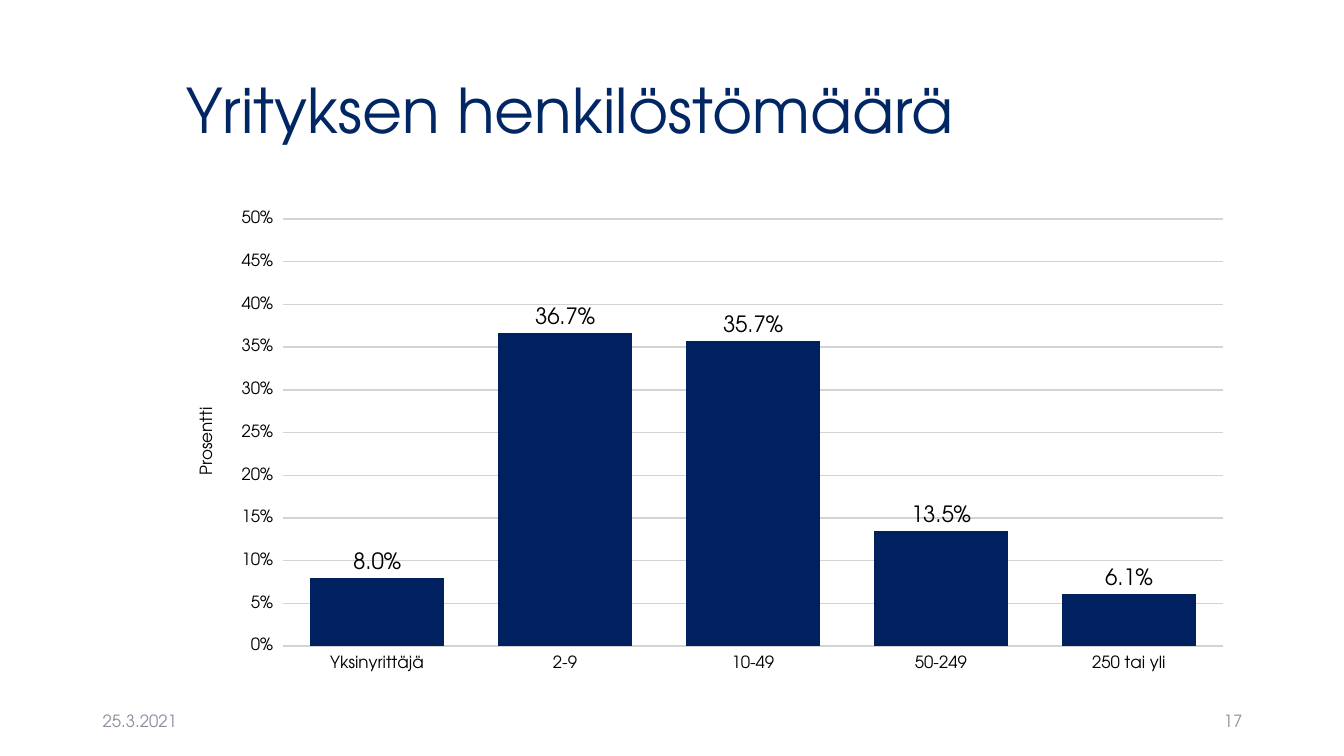
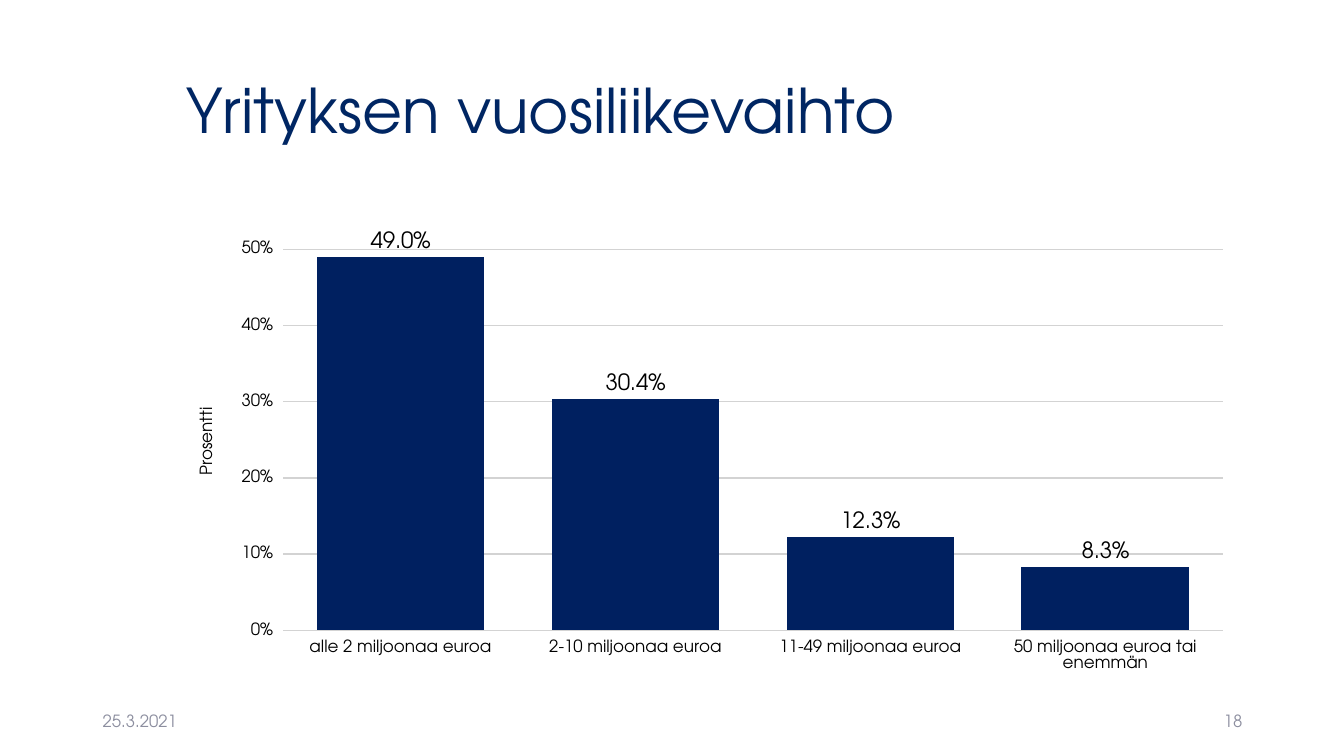
from pptx import Presentation
from pptx.chart.data import CategoryChartData
from pptx.dml.color import RGBColor
from pptx.enum.chart import XL_CHART_TYPE, XL_LABEL_POSITION, XL_TICK_MARK
from pptx.enum.text import MSO_ANCHOR, PP_ALIGN
from pptx.util import Inches, Pt

COLUMNS = XL_CHART_TYPE.COLUMN_CLUSTERED
OUTSIDE_END = XL_LABEL_POSITION.OUTSIDE_END
TICK_OUT = XL_TICK_MARK.OUTSIDE
MIDDLE = MSO_ANCHOR.MIDDLE
LEFT, RIGHT = PP_ALIGN.LEFT, PP_ALIGN.RIGHT

FONT = "TeX Gyre Adventor"
COLORS = {
    "title": "002663",
    "column": "002060",
    "text": "000000",
    "footer": "8C8E9F",
    "grid": "D3D3D3",
}
DATE = "25.3.2021"
FIRST_NUMBER = 17
AXIS_TITLE = "Prosentti"
CONTENT_LEFT, CONTENT_WIDTH = 1.75, 10.59

SLIDES = [
    {
        "title": "Yrityksen henkilöstömäärä",
        "shares": {
            "Yksinyrittäjä": 0.08,
            "2-9": 0.367,
            "10-49": 0.357,
            "50-249": 0.135,
            "250 tai yli": 0.061,
        },
        "maximum": 0.5,
        "step": 0.05,
    },
    {
        "title": "Yrityksen vuosiliikevaihto",
        "shares": {
            "alle 2 miljoonaa euroa": 0.49,
            "2-10 miljoonaa euroa": 0.304,
            "11-49 miljoonaa euroa": 0.123,
            "50 miljoonaa euroa tai enemmän": 0.083,
        },
        "maximum": 0.55,
        "step": 0.1,
    },
]


def color(name):
    return RGBColor.from_string(COLORS[name])


def style_font(font, size, color_name):
    font.name = FONT
    font.size = Pt(size)
    font.bold = False
    font.color.rgb = color(color_name)


def place(shape, left, top, width, height):
    shape.left, shape.top = Inches(left), Inches(top)
    shape.width, shape.height = Inches(width), Inches(height)


def set_title(page, text):
    title = page.shapes.title
    title.text = text
    title.text_frame.vertical_anchor = MIDDLE
    para = title.text_frame.paragraphs[0]
    para.alignment = LEFT
    para.line_spacing = 0.9
    style_font(para.font, 44, "title")


def add_footer(page, text, left, alignment):
    box = page.shapes.add_textbox(Inches(left), Inches(6.95), Inches(3), Inches(0.4))
    frame = box.text_frame
    frame.word_wrap = True
    frame.vertical_anchor = MIDDLE
    para = frame.paragraphs[0]
    para.text = text
    para.alignment = alignment
    style_font(para.font, 12, "footer")


def add_share_chart(page, shares, maximum, step):
    data = CategoryChartData(number_format="0.0%")
    data.categories = list(shares)
    data.add_series("Series 1", list(shares.values()))
    chart = page.shapes.add_chart(
        COLUMNS, Inches(CONTENT_LEFT), Inches(2), Inches(CONTENT_WIDTH), Inches(4.76), data
    ).chart
    chart.has_title = False
    chart.has_legend = False
    style_font(chart.font, 11, "text")

    for axis in (chart.category_axis, chart.value_axis):
        axis.major_tick_mark = TICK_OUT
        axis.format.line.fill.background()
        style_font(axis.tick_labels.font, 12, "text")

    value_axis = chart.value_axis
    value_axis.minimum_scale = 0
    value_axis.maximum_scale = maximum
    value_axis.major_unit = step
    value_axis.tick_labels.number_format = "0%"
    value_axis.tick_labels.number_format_is_linked = False
    grid_line = value_axis.major_gridlines.format.line
    grid_line.color.rgb = color("grid")
    grid_line.width = Pt(1)
    title_para = value_axis.axis_title.text_frame.paragraphs[0]
    title_para.text = AXIS_TITLE
    style_font(title_para.font, 12, "text")

    plot = chart.plots[0]
    plot.gap_width = 40
    plot.vary_by_categories = False
    fill = plot.series[0].format.fill
    fill.solid()
    fill.fore_color.rgb = color("column")
    plot.has_data_labels = True
    labels = plot.data_labels
    labels.show_value = True
    labels.position = OUTSIDE_END
    labels.number_format = "0.0%"
    labels.number_format_is_linked = False
    style_font(labels.font, 16, "text")


def main():
    deck = Presentation()
    deck.slide_width, deck.slide_height = Inches(13.33), Inches(7.5)
    title_only = deck.slide_layouts.get_by_name("Title Only")
    place(title_only.placeholders[0], CONTENT_LEFT, 0.4, CONTENT_WIDTH, 1.45)

    for number, content in enumerate(SLIDES, FIRST_NUMBER):
        page = deck.slides.add_slide(title_only)
        set_title(page, content["title"])
        add_footer(page, DATE, 0.92, LEFT)
        add_footer(page, str(number), 9.42, RIGHT)
        add_share_chart(page, content["shares"], content["maximum"], content["step"])

    deck.save("out.pptx")


if __name__ == "__main__":
    main()
